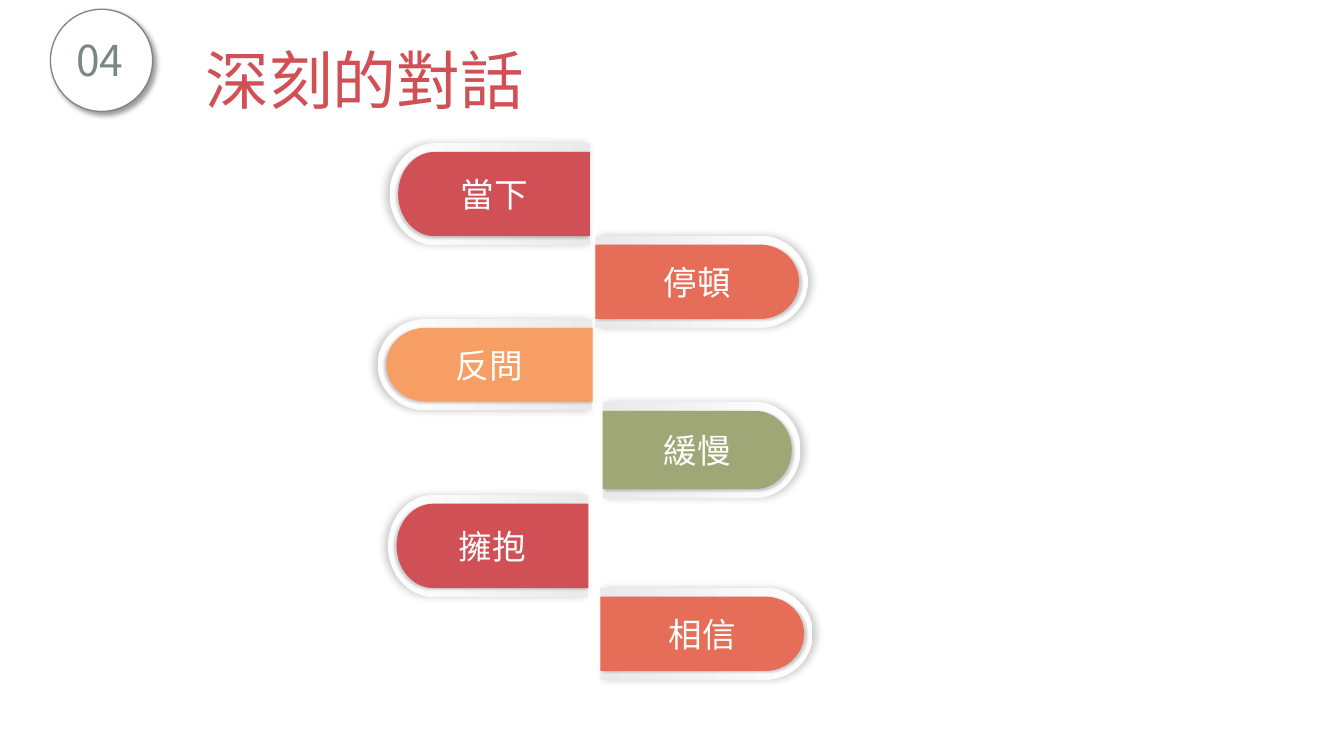
import math

import pptx
import pptx.dml.color
import pptx.enum.text
import pptx.enum.shapes
import pptx.oxml
import pptx.oxml.ns
import pptx.util
from lxml import etree

Pt = pptx.util.Pt
RGB = pptx.dml.color.RGBColor.from_string
qn = pptx.oxml.ns.qn

FONT = "Noto Sans CJK SC"
COLORS = {
    "red": "D05056",
    "coral": "E66D57",
    "orange": "F69E63",
    "olive": "A0A776",
    "grey_green": "798883",
    "white": "FFFFFF",
    "rim_grey": "EAEAEA",
    "shadow": "000000",
}


def add_shadow(sp, alpha, blur, dist, angle):
    """Give a shape an outer shadow: alpha in percent, blur and dist in points."""
    sp.shadow.inherit = False
    effects = sp._element.spPr.find(qn("a:effectLst"))
    shadow = etree.SubElement(
        effects, qn("a:outerShdw"), blurRad=str(Pt(blur)), dist=str(Pt(dist)),
        dir=str(angle * 60000), algn="ctr", rotWithShape="0")
    color = etree.SubElement(shadow, qn("a:srgbClr"), val=COLORS["shadow"])
    etree.SubElement(color, qn("a:alpha"), val=str(alpha * 1000))


def write_text(sp, text, size, color, align):
    tf = sp.text_frame
    tf.word_wrap = True
    tf.vertical_anchor = pptx.enum.text.MSO_ANCHOR.MIDDLE
    p = tf.paragraphs[0]
    p.alignment = align
    r = p.add_run()
    r.text = text
    r.font.size = Pt(size)
    r.font.name = FONT
    r.font.color.rgb = RGB(COLORS[color])
    etree.SubElement(r.font._element, qn("a:ea"), typeface=FONT)


LEFT = pptx.enum.text.PP_ALIGN.LEFT
CENTER = pptx.enum.text.PP_ALIGN.CENTER

prs = pptx.Presentation()
prs.slide_width, prs.slide_height = Pt(1012.5), Pt(569.5)
s = prs.slides.add_slide(prs.slide_layouts[6])

# Number badge
badge = s.shapes.add_group_shape()
circle = badge.shapes.add_shape(
    pptx.enum.shapes.MSO_SHAPE.OVAL, Pt(38), Pt(7), Pt(77), Pt(77))
circle.fill.solid()
circle.fill.fore_color.rgb = RGB(COLORS["white"])
circle.line.color.rgb = RGB(COLORS["grey_green"])
circle.line.width = Pt(1)
add_shadow(circle, 40, 4, 3, 45)
number = badge.shapes.add_textbox(Pt(50.4), Pt(22), Pt(65.5), Pt(46))
write_text(number, "04", 32, "grey_green", LEFT)

# Title
title = s.shapes.add_textbox(Pt(147.6), Pt(26.5), Pt(289.5), Pt(65.5))
write_text(title, "深刻的對話", 48, "red", LEFT)

# Tabs: text, colour, direction (-1 left, 1 right), flat edge x, top, width, height, end radius
TABS = [
    ("當下", "red", -1, 444.5, 108, 151, 76.5, 34),
    ("停頓", "coral", 1, 448.5, 177.8, 160, 69, 36),
    ("反問", "orange", -1, 446.5, 240.5, 162, 68.5, 36),
    ("緩慢", "olive", 1, 454, 303, 149, 72, 34),
    ("擁抱", "red", -1, 443.3, 373, 151, 76.5, 34),
    ("相信", "coral", 1, 452.3, 443, 160, 69, 36),
]
RIM = 6.5
ARC_STEPS = 32

for text, color, side, edge, top, width, height, radius in TABS:
    tab = s.shapes.add_group_shape()
    for inset in (0, RIM):
        half = height / 2 - inset
        middle = top + height / 2
        round_x = radius - inset
        center_x = edge + side * (width - radius)
        outline = []
        for i in range(ARC_STEPS + 1):
            t = math.pi * (i / ARC_STEPS - 0.5)
            outline.append((Pt(center_x + side * round_x * math.cos(t)),
                            Pt(middle + half * math.sin(t))))
        outline.append((Pt(edge), Pt(middle + half)))
        builder = tab.shapes.build_freeform(Pt(edge), Pt(middle - half))
        builder.add_line_segments(outline, close=True)
        sp = builder.convert_to_shape()
        sp.line.fill.background()
        if inset:
            sp.fill.solid()
            sp.fill.fore_color.rgb = RGB(COLORS[color])
            add_shadow(sp, 20, 2, 2, 30 if side > 0 else 150)
            write_text(sp, text, 25.3, "white", CENTER)
        else:
            sp.fill.gradient()
            sp.fill.gradient_angle = 0
            shades = ("white", "rim_grey")[::-side]
            for stop, shade in zip(sp.fill.gradient_stops, shades):
                stop.color.rgb = RGB(COLORS[shade])
            add_shadow(sp, 20, 6, 3, 0 if side > 0 else 180)

prs.save("out.pptx")
